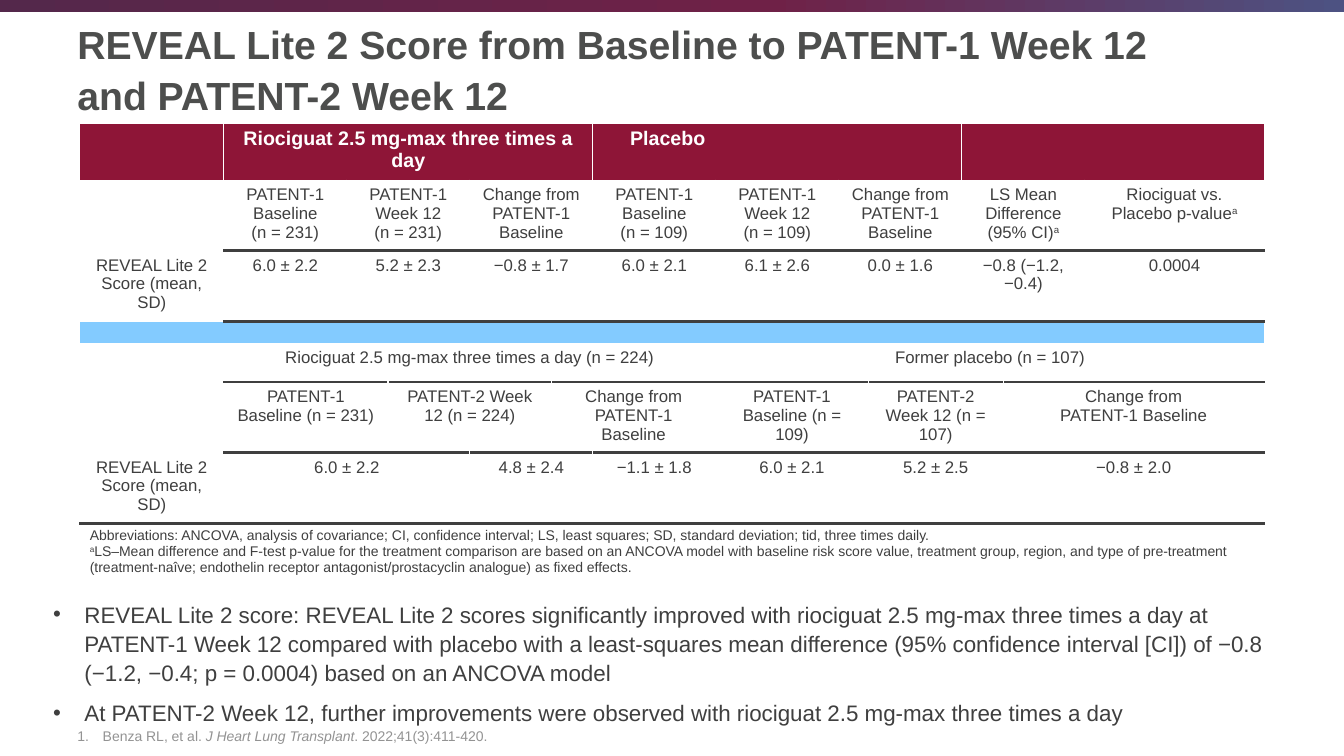
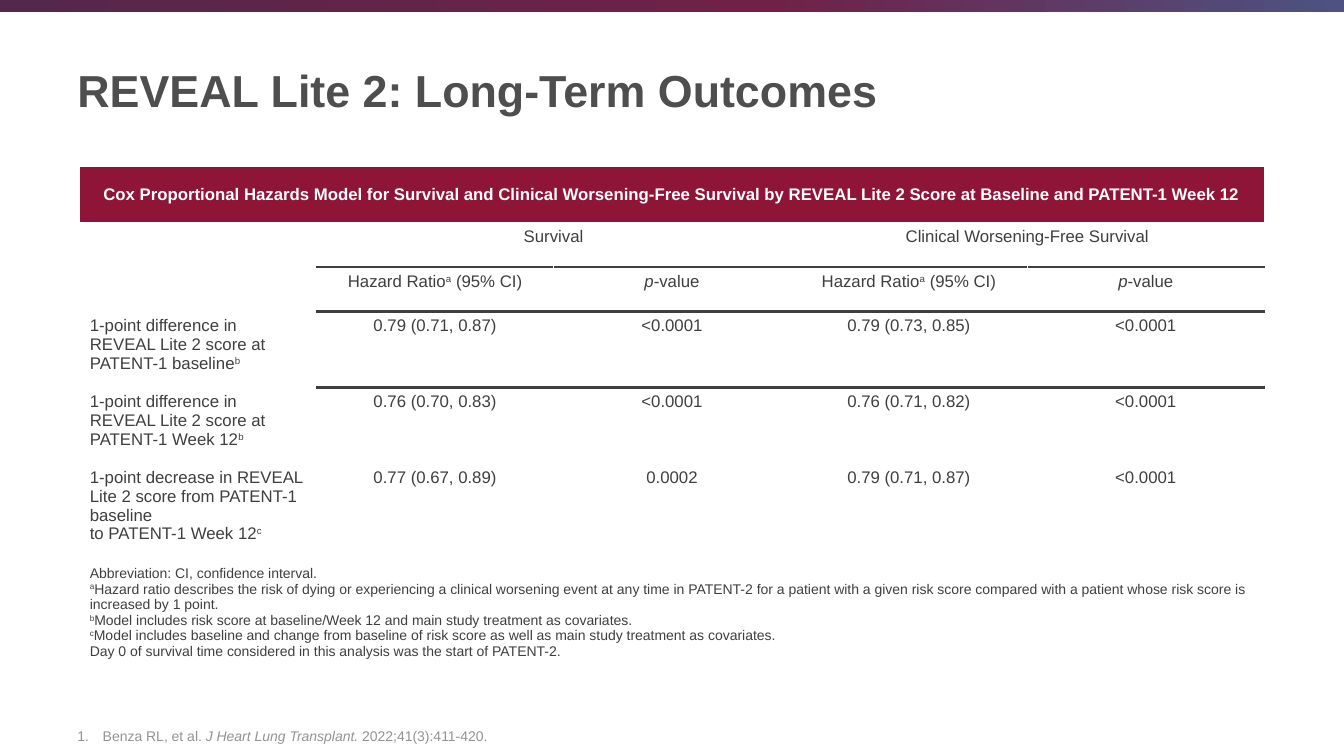
"""Build two slides on REVEAL Lite 2 scores and long-term outcomes."""
from lxml.etree import SubElement
from pptx import Presentation
from pptx.dml.color import RGBColor
from pptx.enum.shapes import MSO_SHAPE
from pptx.enum.text import MSO_ANCHOR, PP_ALIGN
from pptx.oxml.ns import qn
from pptx.util import Cm, Pt

LEFT, CENTER = PP_ALIGN.LEFT, PP_ALIGN.CENTER
TOP, MIDDLE, BOTTOM = MSO_ANCHOR.TOP, MSO_ANCHOR.MIDDLE, MSO_ANCHOR.BOTTOM
RECTANGLE = MSO_SHAPE.RECTANGLE

FONT = "Arial"
WHITE, DARK, TITLE_GREY, SOURCE_GREY = "FFFFFF", "3F3F3F", "4D4E4D", "939393"
CRIMSON, SKY = "8E1537", "83CBFF"
BAND_STOPS = [(0, "54284B"), (57000, "6F2147"), (100000, "4D5282")]
EMPTY_SIZE = 7


def paint(fill, color):
    """Give a shape, cell or font fill one solid colour."""
    fill.solid()
    fill.fore_color.rgb = RGBColor.from_string(color)


def write(frame, text, size=12, color=DARK, bold=False, align=LEFT, anchor=TOP,
          bullet=None, indent=0, spacing=1.0, gap=0):
    """Write one paragraph a line, with *italic* and ^superscript^ marks."""
    frame.word_wrap = True
    frame.vertical_anchor = anchor
    for index, line in enumerate(text.split("\n")):
        paragraph = frame.add_paragraph() if index else frame.paragraphs[0]
        paragraph.alignment = align
        paragraph.line_spacing = spacing
        paragraph.space_before = Pt(gap if index else 0)
        paragraph.space_after = Pt(gap)
        if bullet:
            properties = paragraph._p.get_or_add_pPr()
            properties.set("marL", str(Cm(indent)))
            properties.set("indent", str(-Cm(indent)))
            if bullet == "1.":
                SubElement(properties, qn("a:buAutoNum"), type="arabicPeriod")
            else:
                SubElement(properties, qn("a:buFont"), typeface=FONT)
                SubElement(properties, qn("a:buChar"), char=bullet)
        if not line:
            SubElement(paragraph._p, qn("a:endParaRPr"), sz=str(EMPTY_SIZE * 100))
            continue
        for italic, part in enumerate(line.split("*")):
            for raised, piece in enumerate(part.split("^")):
                if not piece:
                    continue
                run = paragraph.add_run()
                run.text = piece
                run.font.name = FONT
                run.font.size = Pt(size)
                run.font.bold = bold
                run.font.italic = italic % 2 == 1
                paint(run.font.fill, color)
                if raised % 2:
                    run.font._element.set("baseline", "30000")


SCORE_LABEL = "REVEAL Lite 2 Score (mean, SD)"
CHANGE = "Change from PATENT-1 Baseline"
RATIO = "Hazard Ratio^a^ (95% CI)"
P_VALUE = "*p*-value"

SCORE_ROWS = [
    [(1, ""), (5, "Riociguat 2.5 mg-max three times a day"), (4, "Placebo"), (3, "")],
    [(1, ""), (1, "PATENT-1 Baseline\n(n = 231)"), (2, "PATENT-1 Week 12\n(n = 231)"),
     (2, CHANGE), (1, "PATENT-1 Baseline\n(n = 109)"),
     (1, "PATENT-1 Week 12\n(n = 109)"), (2, CHANGE),
     (2, "LS Mean Difference (95% CI)^a^"), (1, "Riociguat vs. Placebo p-value^a^")],
    [(1, SCORE_LABEL), (1, "6.0 ± 2.2"), (2, "5.2 ± 2.3"), (2, "−0.8 ± 1.7"),
     (1, "6.0 ± 2.1"), (1, "6.1 ± 2.6"), (2, "0.0 ± 1.6"),
     (2, "−0.8 (−1.2, −0.4)"), (1, "0.0004")],
    [(13, "")],
    [(1, ""), (6, "Riociguat 2.5 mg-max three times a day (n = 224)"),
     (6, "Former placebo (n = 107)")],
    [(1, ""), (2, "PATENT-1 Baseline (n = 231)"), (2, "PATENT-2 Week 12 (n = 224)"),
     (2, CHANGE), (2, "PATENT-1 Baseline (n = 109)"),
     (2, "PATENT-2 Week 12 (n = 107)"), (2, "Change from\nPATENT-1 Baseline")],
    [(1, SCORE_LABEL), (3, "6.0 ± 2.2"), (2, "4.8 ± 2.4"), (1, "−1.1 ± 1.8"),
     (2, "6.0 ± 2.1"), (2, "5.2 ± 2.5"), (2, "−0.8 ± 2.0")],
    [(13, "Abbreviations: ANCOVA, analysis of covariance; CI, confidence interval; LS, "
          "least squares; SD, standard deviation; tid, three times daily.\n"
          "^a^LS–Mean difference and F-test p-value for the treatment comparison are "
          "based on an ANCOVA model with baseline risk score value, treatment group, "
          "region, and type of pre-treatment (treatment-naîve; endothelin receptor "
          "antagonist/prostacyclin analogue) as fixed effects.")],
]
OUTCOME_ROWS = [
    [(5, "Cox Proportional Hazards Model for Survival and Clinical Worsening-Free "
         "Survival by REVEAL Lite 2 Score at Baseline and PATENT-1 Week 12")],
    [(1, ""), (2, "Survival"), (2, "Clinical Worsening-Free Survival")],
    [(1, ""), (1, RATIO), (1, P_VALUE), (1, RATIO), (1, P_VALUE)],
    [(1, "1-point difference in REVEAL Lite 2 score at PATENT-1 baseline^b^"),
     (1, "0.79 (0.71, 0.87)"), (1, "<0.0001"), (1, "0.79 (0.73, 0.85)"), (1, "<0.0001")],
    [(1, "1-point difference in REVEAL Lite 2 score at PATENT-1 Week 12^b^"),
     (1, "0.76 (0.70, 0.83)"), (1, "<0.0001"), (1, "0.76 (0.71, 0.82)"), (1, "<0.0001")],
    [(1, "1-point decrease in REVEAL Lite 2 score from PATENT-1 baseline\n"
         "to PATENT-1 Week 12^c^"),
     (1, "0.77 (0.67, 0.89)"), (1, "0.0002"), (1, "0.79 (0.71, 0.87)"), (1, "<0.0001")],
    [(5, "Abbreviation: CI, confidence interval.\n"
         "^a^Hazard ratio describes the risk of dying or experiencing a clinical "
         "worsening event at any time in PATENT-2 for a patient with a given risk score "
         "compared with a patient whose risk score is increased by 1 point.\n"
         "^b^Model includes risk score at baseline/Week 12 and main study treatment as "
         "covariates.\n"
         "^c^Model includes baseline and change from baseline of risk score as well as "
         "main study treatment as covariates.\n"
         "Day 0 of survival time considered in this analysis was the start of PATENT-2.")],
]
FINDINGS = (
    "REVEAL Lite 2 score: REVEAL Lite 2 scores significantly improved with riociguat "
    "2.5 mg-max three times a day at PATENT-1 Week 12 compared with placebo with a "
    "least-squares mean difference (95% confidence interval [CI]) of −0.8 "
    "(−1.2, −0.4; p = 0.0004) based on an ANCOVA model\n"
    "At PATENT-2 Week 12, further improvements were observed with riociguat 2.5 mg-max "
    "three times a day"
)

SLIDES = [
    dict(title="REVEAL Lite 2 Score from Baseline to PATENT-1 Week 12\n"
               "and PATENT-2 Week 12",
         title_top=0.05, title_size=28, table_top=3.1, rows=SCORE_ROWS,
         widths=[3.63, 3.1, 1.04, 2.06, 2.06, 1.04, 3.1, 3.1, 0.74, 2.36, 1.04, 2.06, 4.52],
         heights=[1.37, 1.68, 1.68, 0.56, 0.97, 1.68, 1.68, 1.45],
         ruled={1, 2, 4, 5, 6}, full_rule=6, header_size=14, header_anchor=TOP,
         label_align=CENTER, findings=FINDINGS,
         source="Benza RL, et al. *J Heart Lung Transplant*. 2022;41(3):411-420."),
    dict(title="REVEAL Lite 2: Long-Term Outcomes",
         title_top=0.56, title_size=32, table_top=4.19, rows=OUTCOME_ROWS,
         widths=[5.97] * 5, heights=[1.42, 1.12, 1.12, 1.91, 1.91, 2.46, 3],
         ruled={1, 2, 3}, full_rule=None, header_size=12, header_anchor=MIDDLE,
         label_align=LEFT, findings=None,
         source="Benza RL, et al. *J Heart Lung Transplant.* 2022;41(3):411-420."),
]

presentation = Presentation()
presentation.slide_width = Cm(33.87)
presentation.slide_height = Cm(19.05)

for content in SLIDES:
    slide = presentation.slides.add_slide(presentation.slide_layouts[6])

    band = slide.shapes.add_shape(RECTANGLE, 0, 0, presentation.slide_width, Cm(0.3))
    band.shadow.inherit = False
    band.line.fill.background()
    band.fill.gradient()
    band.fill.gradient_angle = 0
    stops = band._element.spPr.find(".//" + qn("a:gsLst"))
    stops.clear()
    for position, color in BAND_STOPS:
        stop = SubElement(stops, qn("a:gs"), pos=str(position))
        SubElement(stop, qn("a:srgbClr"), val=color)

    title = slide.shapes.add_textbox(Cm(1.7), Cm(content["title_top"]), Cm(29.85), Cm(3.3))
    write(title.text_frame, content["title"], size=content["title_size"],
          color=TITLE_GREY, bold=True, anchor=MIDDLE, spacing=1.08)

    rows, widths, heights = content["rows"], content["widths"], content["heights"]
    table = slide.shapes.add_table(len(rows), len(widths), Cm(2.01), Cm(content["table_top"]),
                                   Cm(sum(widths)), Cm(sum(heights))).table
    table.first_row = False
    table.horz_banding = False
    for column, width in zip(table.columns, widths):
        column.width = Cm(width)
    for row, height in zip(table.rows, heights):
        row.height = Cm(height)

    for row_index, row_cells in enumerate(rows):
        is_header = row_index == 0
        is_note = row_index == len(rows) - 1
        is_divider = row_cells == [(len(widths), "")]
        background = CRIMSON if is_header else SKY if is_divider else WHITE
        for column_index in range(len(widths)):
            cell = table.cell(row_index, column_index)
            properties = cell._tc.get_or_add_tcPr()
            for side, rule in (("L", None), ("R", None),
                               ("T", row_index - 1), ("B", row_index)):
                is_ruled = rule in content["ruled"] and (
                    column_index > 0 or rule == content["full_rule"])
                border = SubElement(properties, qn("a:ln" + side),
                                    w=str(Pt(2.25 if is_ruled else 1)))
                border_fill = SubElement(border, qn("a:solidFill"))
                SubElement(border_fill, qn("a:srgbClr"), val=DARK if is_ruled else WHITE)
            paint(cell.fill, background)

        column_index = 0
        for span, text in row_cells:
            cell = table.cell(row_index, column_index)
            if span > 1:
                cell.merge(table.cell(row_index, column_index + span - 1))
            align = LEFT if is_note else CENTER
            if column_index == 0 and not is_header and not is_note:
                align = content["label_align"]
            if text == "Placebo":
                align = LEFT
                cell.margin_left = Cm(0.94)
            write(cell.text_frame, text, align=align, bold=is_header,
                  size=content["header_size"] if is_header else 10 if is_note else 12,
                  color=WHITE if is_header else DARK)
            cell.vertical_anchor = content["header_anchor"] if is_header else TOP
            column_index += span

    if content["findings"]:
        findings = slide.shapes.add_textbox(Cm(1.09), Cm(14.96), Cm(31.95), Cm(3.28))
        write(findings.text_frame, content["findings"], size=16, bullet="•",
              indent=0.79, spacing=1.08, gap=4)

    source = slide.shapes.add_textbox(Cm(1.7), Cm(17.65), Cm(29.85), Cm(1.22))
    write(source.text_frame, content["source"], size=10, color=SOURCE_GREY,
          anchor=BOTTOM, bullet="1.", indent=0.64)

presentation.save("out.pptx")
